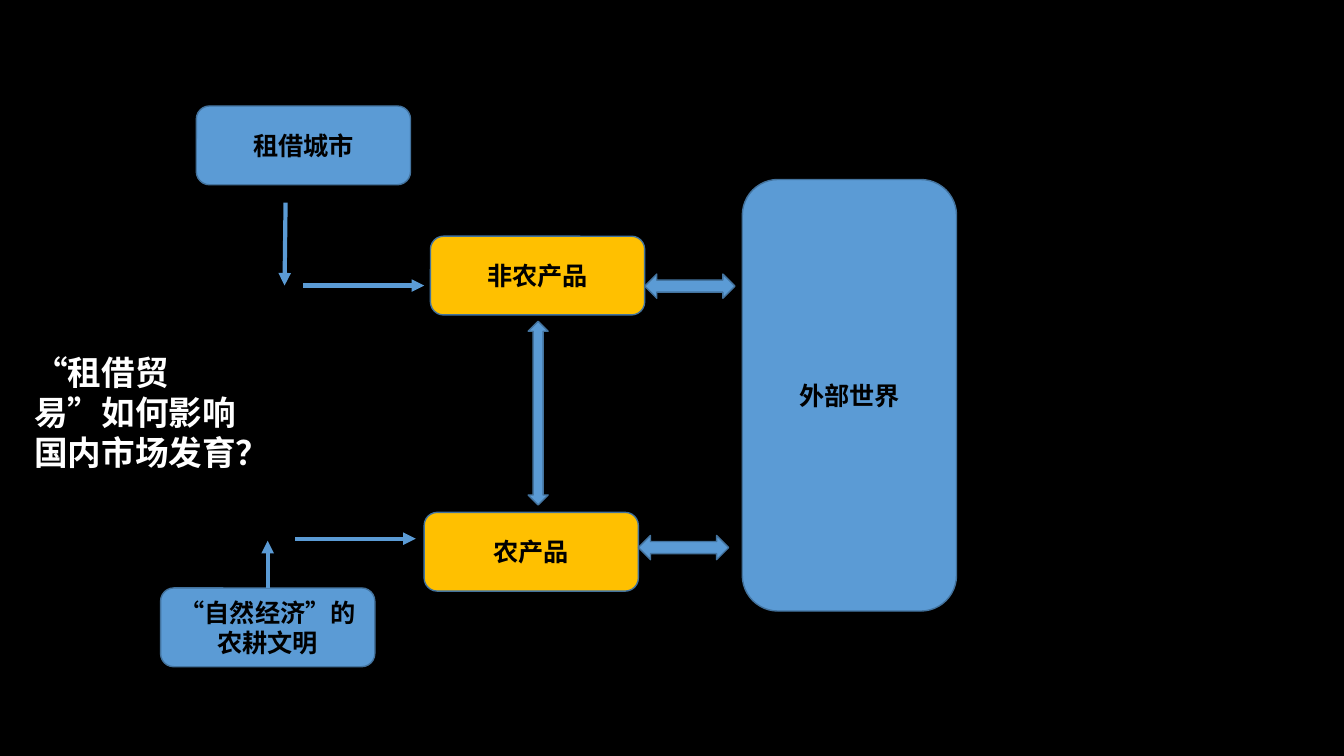
from dataclasses import dataclass

from lxml import etree
from pptx import Presentation
from pptx.dml.color import RGBColor
from pptx.enum.shapes import MSO_CONNECTOR, MSO_SHAPE
from pptx.enum.text import MSO_ANCHOR, MSO_AUTO_SIZE, PP_ALIGN
from pptx.oxml.ns import qn
from pptx.util import Emu, Pt

ROUNDED = MSO_SHAPE.ROUNDED_RECTANGLE
LEFT_RIGHT = MSO_SHAPE.LEFT_RIGHT_ARROW
UP_DOWN = MSO_SHAPE.UP_DOWN_ARROW
STRAIGHT = MSO_CONNECTOR.STRAIGHT
TOP, MIDDLE = MSO_ANCHOR.TOP, MSO_ANCHOR.MIDDLE
LEFT, CENTER = PP_ALIGN.LEFT, PP_ALIGN.CENTER
GROW = MSO_AUTO_SIZE.SHAPE_TO_FIT_TEXT

EMU_PER_PX = 9525
TITLE_ONLY = 5
TOP_SITE = 0
FONT = "Calibri"
BLACK, WHITE = "000000", "FFFFFF"
BLUE, GOLD, OUTLINE = "5B9BD5", "FFC000", "43739E"
BOX_W, BOX_H = 204, 75


@dataclass
class Block:
    kind: MSO_SHAPE
    x: int
    y: int
    w: int = BOX_W
    h: int = BOX_H
    fill: str = BLUE
    text: str = ""


@dataclass
class Arrow:
    x1: int
    y1: int
    x2: int
    y2: int


CITIES = Block(ROUNDED, 187, 101, text="租借城市")
FARMING = Block(ROUNDED, 153, 560, text="“自然经济”的农耕文明")
BLOCKS = [
    CITIES,
    FARMING,
    Block(ROUNDED, 707, 171, h=411, text="外部世界"),
    Block(ROUNDED, 410, 225, fill=GOLD, text="非农产品"),
    Block(ROUNDED, 404, 488, fill=GOLD, text="农产品"),
    Block(LEFT_RIGHT, 614, 261, 86, 23),
    Block(UP_DOWN, 503, 306, 19, 175),
    Block(LEFT_RIGHT, 608, 510, 86, 23),
]
ARROWS = [
    Arrow(272, 193, 271, 272),
    Arrow(289, 272, 404, 272),
    Arrow(281, 513, 396, 513),
]
FARMING_ARROW = Arrow(255, 560, 255, 515)


def px(n: int) -> Emu:
    return Emu(n * EMU_PER_PX)


def color(value: str) -> RGBColor:
    return RGBColor.from_string(value)


def write(sp, text: str, size: int, ink: str, align, anchor) -> None:
    tf = sp.text_frame
    tf.word_wrap = True
    tf.vertical_anchor = anchor
    p = tf.paragraphs[0]
    p.text = text
    p.alignment = align
    p.font.name, p.font.size, p.font.bold = FONT, Pt(size), True
    p.font.color.rgb = color(ink)


def add_block(slide, block: Block):
    sp = slide.shapes.add_shape(
        block.kind, px(block.x), px(block.y), px(block.w), px(block.h))
    sp.shadow.inherit = False
    sp.fill.solid()
    sp.fill.fore_color.rgb = color(block.fill)
    sp.line.color.rgb = color(OUTLINE)
    sp.line.width = Pt(1)
    if block.text:
        write(sp, block.text, 18, BLACK, CENTER, MIDDLE)
    return sp


def add_arrow(slide, arrow: Arrow):
    cxn = slide.shapes.add_connector(
        STRAIGHT, px(arrow.x1), px(arrow.y1), px(arrow.x2), px(arrow.y2))
    cxn.line.color.rgb = color(BLUE)
    cxn.line.width = Pt(3)
    etree.SubElement(cxn.line._get_or_add_ln(), qn("a:tailEnd"), type="triangle")
    etree.SubElement(cxn._element.spPr, qn("a:effectLst"))
    return cxn


def set_title(slide) -> None:
    title = slide.shapes.title
    title.left, title.top = px(23), px(330)
    title.width, title.height = px(232), px(126)
    write(title, "“租借贸易”如何影响国内市场发育？", 24, WHITE, LEFT, TOP)
    title.text_frame.auto_size = GROW


def main() -> None:
    prs = Presentation()
    prs.slide_width, prs.slide_height = px(1280), px(720)
    slide = prs.slides.add_slide(prs.slide_layouts[TITLE_ONLY])
    slide.background.fill.solid()
    slide.background.fill.fore_color.rgb = color(BLACK)
    set_title(slide)
    shapes = {block.text: add_block(slide, block) for block in BLOCKS}
    for arrow in ARROWS:
        add_arrow(slide, arrow)
    add_arrow(slide, FARMING_ARROW).begin_connect(shapes[FARMING.text], TOP_SITE)
    prs.save("out.pptx")


if __name__ == "__main__":
    main()
